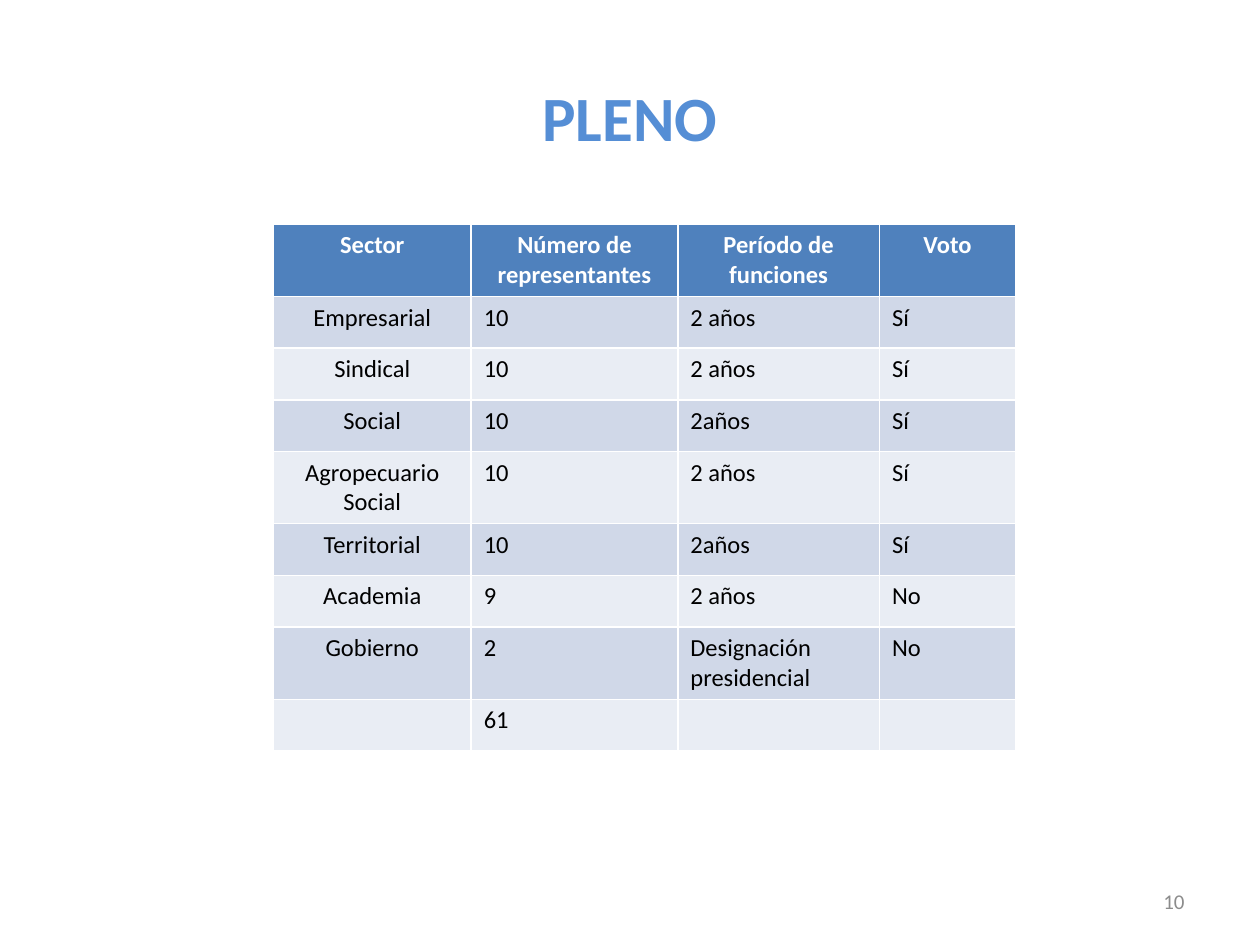
"""Build the PLENO slide: a table of sectors, representatives, terms and votes."""
from pptx import Presentation
from pptx.dml.color import RGBColor as RGB
from pptx.enum.text import MSO_ANCHOR as ANCHOR, PP_ALIGN as ALIGN
from pptx.util import Inches, Pt

THEME = {
    "font": "Calibri",
    "title": "558ED5", "number": "8C8C8C", "head_text": "FFFFFF", "text": "000000",
    "head": "4F81BD", "bands": ("D0D8E8", "E9EDF4"),
    "title_size": 36, "table_size": 14, "number_size": 12,
}


def write(tf, text, size, color, bold=False, align=None):
    p = tf.paragraphs[0]
    p.alignment = align
    r = p.add_run()
    r.text = text
    r.font.name, r.font.size, r.font.bold = THEME["font"], Pt(size), bold
    r.font.color.rgb = RGB.from_string(color)


prs = Presentation()
prs.slide_width, prs.slide_height = Inches(10), Inches(7.5)
s = prs.slides.add_slide(prs.slide_layouts[5])

title = s.shapes.title
title.left, title.top = Inches(0.5), Inches(0.3)
title.width, title.height = Inches(9), Inches(1.25)
title.text_frame.vertical_anchor = ANCHOR.MIDDLE
write(title.text_frame, "PLENO", size=THEME["title_size"], color=THEME["title"],
      bold=True, align=ALIGN.CENTER)

rows = [
    ("Sector", "Número de representantes", "Período de funciones", "Voto"),
    ("Empresarial", "10", "2 años", "Sí"),
    ("Sindical", "10", "2 años", "Sí"),
    ("Social", "10", "2años", "Sí"),
    ("Agropecuario Social", "10", "2 años", "Sí"),
    ("Territorial", "10", "2años", "Sí"),
    ("Academia", "9", "2 años", "No"),
    ("Gobierno", "2", "Designación presidencial", "No"),
    ("", "61", "", ""),
]
widths = (1.57, 1.64, 1.6, 1.08)
row_height = 0.41
table = s.shapes.add_table(len(rows), len(widths), Inches(2.17), Inches(1.78),
                           Inches(sum(widths)), Inches(row_height * len(rows))).table
for column, width in zip(table.columns, widths):
    column.width = Inches(width)

for i, row in enumerate(rows):
    table.rows[i].height = Inches(row_height)
    head = i == 0
    fill = THEME["head"] if head else THEME["bands"][(i - 1) % 2]
    for j, text in enumerate(row):
        cell = table.cell(i, j)
        cell.fill.solid()
        cell.fill.fore_color.rgb = RGB.from_string(fill)
        if text:
            write(cell.text_frame, text, size=THEME["table_size"],
                  color=THEME["head_text" if head else "text"], bold=head,
                  align=ALIGN.CENTER if head or j == 0 else ALIGN.LEFT)

number = s.shapes.add_textbox(Inches(7.17), Inches(6.95), Inches(2.33), Inches(0.4))
tf = number.text_frame
tf.word_wrap = True
tf.vertical_anchor = ANCHOR.MIDDLE
write(tf, "10", size=THEME["number_size"], color=THEME["number"], align=ALIGN.RIGHT)

prs.save("out.pptx")
